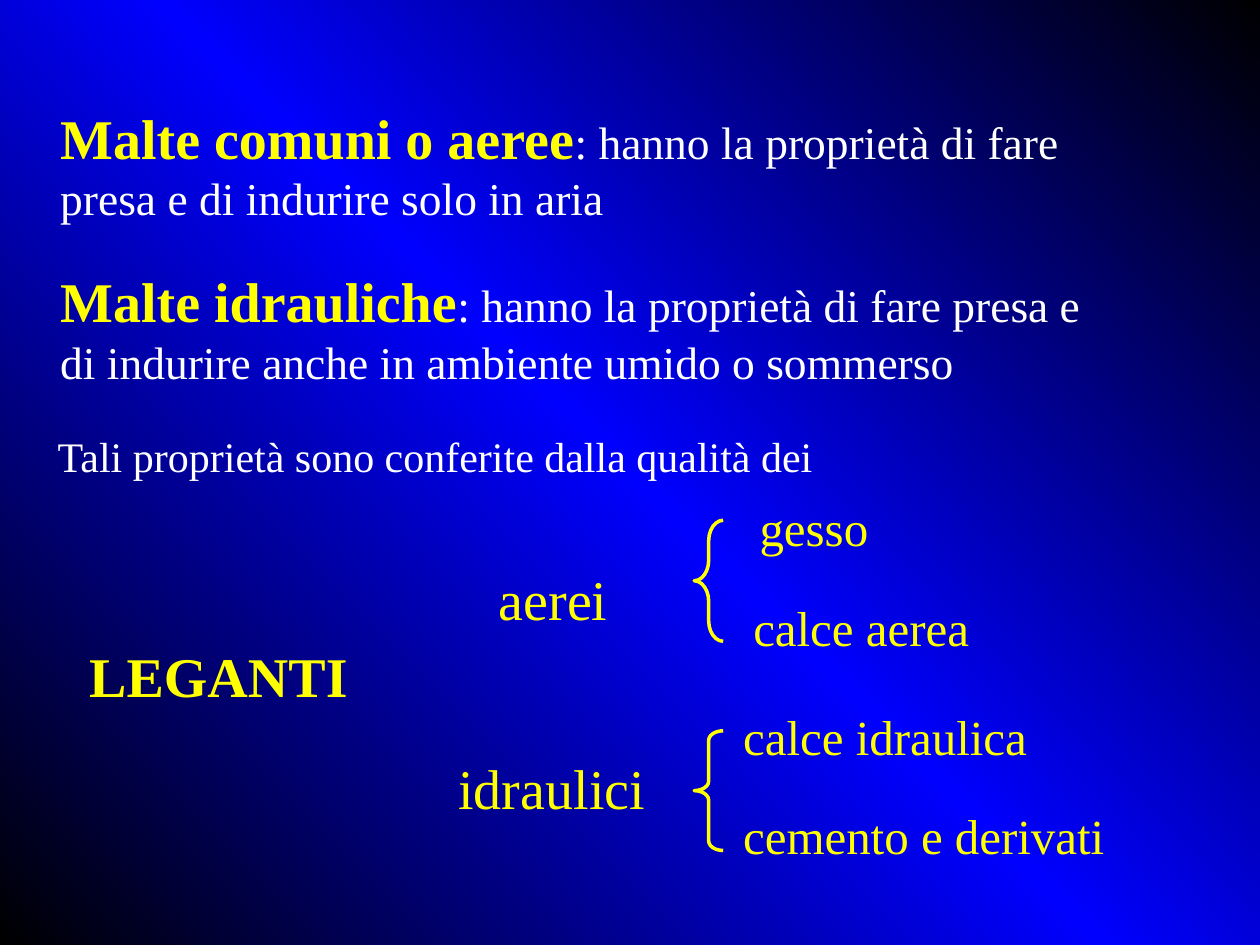
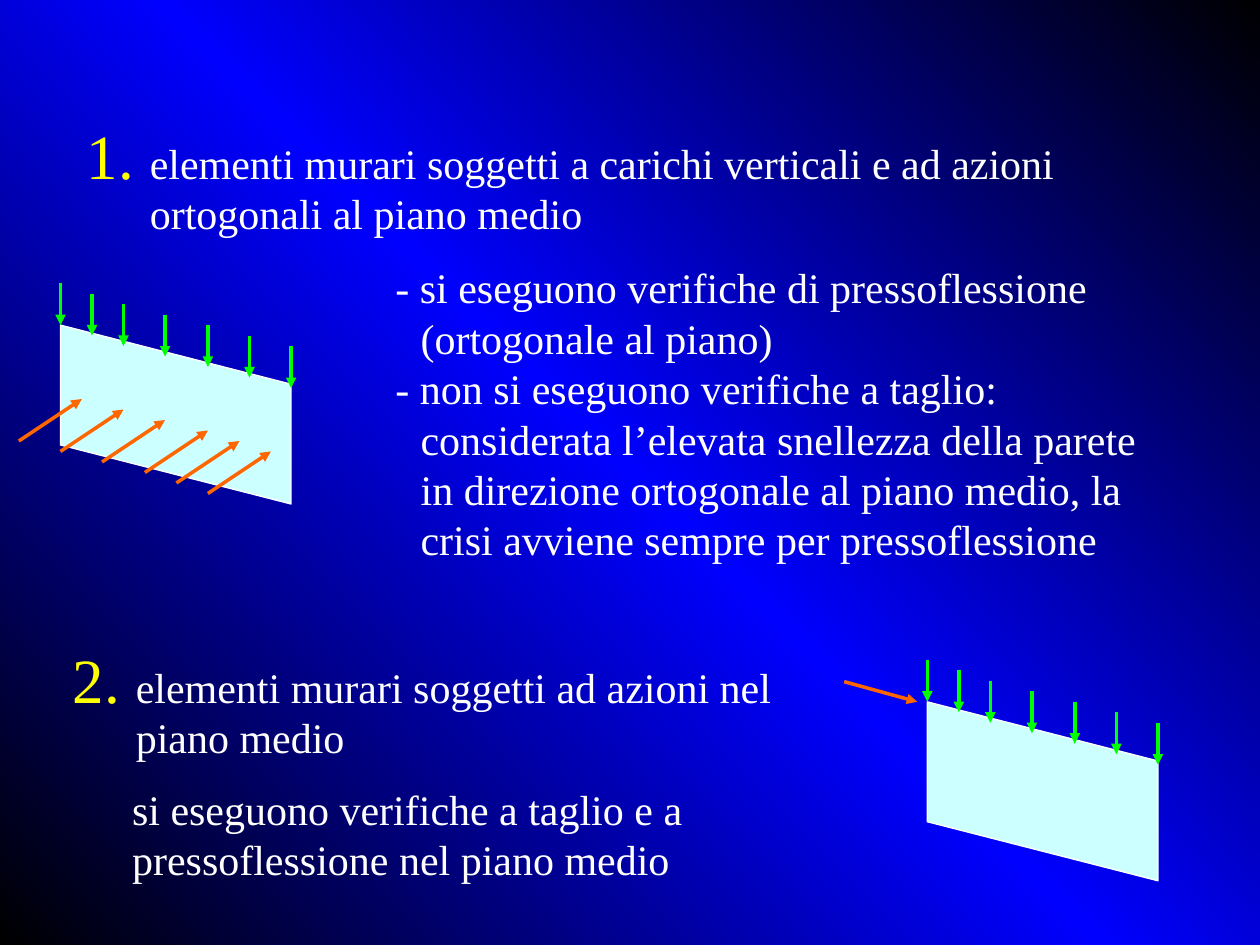
import copy

import lxml.etree
import pptx
import pptx.dml.color
import pptx.enum.shapes
import pptx.enum.text
import pptx.oxml.ns
import pptx.util

Inches = pptx.util.Inches
Pt = pptx.util.Pt
RGBColor = pptx.dml.color.RGBColor
SHAPES = pptx.enum.shapes.MSO_SHAPE
qn = pptx.oxml.ns.qn

FONT = "Times New Roman"
BLACK = RGBColor(0x00, 0x00, 0x00)
BLUE = RGBColor(0x00, 0x00, 0xFF)
WHITE = RGBColor(0xFF, 0xFF, 0xFF)
YELLOW = RGBColor(0xFF, 0xFF, 0x00)
GREEN = RGBColor(0x00, 0xFF, 0x00)
ORANGE = RGBColor(0xFF, 0x66, 0x00)
PALE_CYAN = RGBColor(0xCC, 0xFF, 0xFF)

# Slide 1: mortar definitions (top, term, explanation)
DEFINITIONS = [
    (0.77, "Malte comuni o aeree",
     ": hanno la proprietà di fare presa e di indurire solo in aria"),
    (2.07, "Malte idrauliche",
     ": hanno la proprietà di fare presa e di indurire anche in ambiente umido o sommerso"),
]
# Slide 1: single-line labels (text, left, top, width, height, size, colour, bold)
LABELS = [
    ("Tali proprietà sono conferite dalla qualità dei", 0.36, 3.37, 6.24, 0.5, 24, WHITE, False),
    ("LEGANTI", 0.61, 5.04, 2.25, 0.63, 32, YELLOW, True),
    ("aerei", 3.86, 4.43, 1.07, 0.63, 32, YELLOW, False),
    ("idraulici", 3.54, 5.93, 1.68, 0.63, 32, YELLOW, False),
    ("gesso", 5.93, 3.9, 1.06, 0.57, 28, YELLOW, False),
    ("calce aerea", 5.88, 4.69, 1.91, 0.57, 28, YELLOW, False),
    ("calce idraulica", 5.8, 5.56, 2.45, 0.57, 28, YELLOW, False),
    ("cemento e derivati", 5.8, 6.34, 3.07, 0.57, 28, YELLOW, False),
]
# Slide 1: braces (top, height, curvature)
BRACES = [(4.13, 0.96, 0.71), (5.8, 0.95, 0.33)]

# Slide 2: text boxes (frame, paragraphs); a paragraph is
# (text, left margin, first-line indent, number or None, space after)
WALL_TEXTS = [
    ((0.59, 1.04, 8.35, 0.9), [
        ("elementi murari soggetti a carichi verticali e ad azioni ortogonali al piano medio",
         0.5, -0.5, 1, 0),
    ]),
    ((3.04, 2.03, 6.33, 2.52), [
        ("- si eseguono verifiche di pressoflessione (ortogonale al piano)", 0.2, -0.2, None, 0),
        ("- non si eseguono verifiche a taglio: considerata l’elevata snellezza della parete "
         "in direzione ortogonale al piano medio, la crisi avviene sempre per pressoflessione",
         0.2, -0.2, None, 0),
    ]),
    ((0.48, 5.2, 6.33, 1.89), [
        ("elementi murari soggetti ad azioni nel piano medio", 0.5, -0.5, 2, 12),
        ("si eseguono verifiche a taglio e a pressoflessione nel piano medio", 0.47, 0, None, 0),
    ]),
]
# Slide 2: walls and load arrows, measured from the wall's upper left corner
WALLS = [(0.48, 2.58), (7.36, 5.57)]
VERTICAL_LOADS = [0, 0.25, 0.5, 0.83, 1.17, 1.5, 1.83]
ORTHOGONAL_LOADS = [-0.33, 0, 0.33, 0.67, 0.92, 1.17]
LOAD_STEP = 1 / 12
LOAD_RISE = 1 / 3
WALL_WIDTH, WALL_HEIGHT = 1.83, 1.42


def format_run(run, size, color, bold=False):
    run.font.name = FONT
    run.font.size = Pt(size)
    run.font.bold = bold
    run.font.color.rgb = color


def add_text_box(slide, left, top, width, height, wrap=True):
    box = slide.shapes.add_textbox(Inches(left), Inches(top), Inches(width), Inches(height))
    box.text_frame.word_wrap = wrap
    box.text_frame.auto_size = pptx.enum.text.MSO_AUTO_SIZE.SHAPE_TO_FIT_TEXT
    return box.text_frame


def indent_paragraph(paragraph, margin, indent, number):
    properties = paragraph._p.get_or_add_pPr()
    properties.set("marL", str(Inches(margin)))
    properties.set("indent", str(Inches(indent)))
    if number:
        color = lxml.etree.SubElement(properties, qn("a:buClr"))
        lxml.etree.SubElement(color, qn("a:srgbClr"), val=str(YELLOW))
        lxml.etree.SubElement(properties, qn("a:buSzPct"), val="150000")
        lxml.etree.SubElement(properties, qn("a:buAutoNum"),
                              type="arabicPeriod", startAt=str(number))


def add_arrow(slide, start_x, start_y, end_x, end_y, color):
    arrow = slide.shapes.add_connector(
        pptx.enum.shapes.MSO_CONNECTOR.STRAIGHT,
        Inches(start_x), Inches(start_y), Inches(end_x), Inches(end_y))
    arrow.line.color.rgb = color
    arrow.line.width = Pt(2)
    lxml.etree.SubElement(arrow.line._get_or_add_ln(), qn("a:tailEnd"), type="triangle")
    lxml.etree.SubElement(arrow._element.spPr, qn("a:effectLst"))


def add_wall(slide, left, top):
    # The parallelogram is turned upright about its centre
    turn = (WALL_WIDTH - WALL_HEIGHT) / 2
    wall = slide.shapes.add_shape(
        SHAPES.PARALLELOGRAM, Inches(left + turn), Inches(top - turn),
        Inches(WALL_HEIGHT), Inches(WALL_WIDTH))
    wall.rotation = 270
    wall.adjustments[0] = 0.33
    wall.shadow.inherit = False
    wall.fill.solid()
    wall.fill.fore_color.rgb = PALE_CYAN
    wall.line.color.rgb = WHITE
    wall.line.width = Pt(0.75)
    for index, offset in enumerate(VERTICAL_LOADS):
        tip = top + index * LOAD_STEP
        add_arrow(slide, left + offset, tip - LOAD_RISE, left + offset, tip, GREEN)


def set_background(master):
    fill = master.background.fill
    fill.gradient()
    fill.gradient_angle = 45
    stop_list = master._element.cSld.find(".//" + qn("a:gsLst"))
    stop_list.append(copy.deepcopy(stop_list[0]))
    for stop, position, color in zip(fill.gradient_stops, (0, 0.5, 1), (BLACK, BLUE, BLACK)):
        stop.position = position
        stop.color.rgb = color


def build_mortar_slide(slide):
    for top, term, explanation in DEFINITIONS:
        paragraph = add_text_box(slide, 0.38, top, 8.5, 1.07).paragraphs[0]
        for text, size, color, bold in ((term, 32, YELLOW, True),
                                        (explanation, 26, WHITE, False)):
            run = paragraph.add_run()
            run.text = text
            format_run(run, size, color, bold)

    for text, left, top, width, height, size, color, bold in LABELS:
        frame = add_text_box(slide, left, top, width, height, wrap=False)
        frame.text = text
        format_run(frame.paragraphs[0].runs[0], size, color, bold)

    for top, height, curvature in BRACES:
        brace = slide.shapes.add_shape(SHAPES.LEFT_BRACE, Inches(5.51), Inches(top),
                                       Inches(0.23), Inches(height))
        brace.adjustments[0] = curvature
        brace.shadow.inherit = False
        brace.fill.background()
        brace.line.color.rgb = YELLOW
        brace.line.width = Pt(2)


def build_wall_slide(slide):
    for left, top in WALLS:
        add_wall(slide, left, top)

    # Loads orthogonal to the first wall, load in the plane of the second
    left, top = WALLS[0]
    for index, offset in enumerate(ORTHOGONAL_LOADS):
        x, y = left + offset, top + 0.92 + index * LOAD_STEP
        add_arrow(slide, x, y, x + 0.5, y - LOAD_RISE, ORANGE)
    add_arrow(slide, 6.7, 5.41, 7.28, 5.57, ORANGE)

    for box, paragraphs in WALL_TEXTS:
        frame = add_text_box(slide, *box)
        for index, (text, margin, indent, number, space_after) in enumerate(paragraphs):
            paragraph = frame.add_paragraph() if index else frame.paragraphs[0]
            paragraph.text = text
            indent_paragraph(paragraph, margin, indent, number)
            paragraph.space_after = Pt(space_after)
            format_run(paragraph.runs[0], 24, WHITE)


def main():
    presentation = pptx.Presentation()
    presentation.slide_width = Inches(10)
    presentation.slide_height = Inches(7.5)
    set_background(presentation.slide_master)
    blank_layout = presentation.slide_layouts[6]
    for build in (build_mortar_slide, build_wall_slide):
        build(presentation.slides.add_slide(blank_layout))
    presentation.save("out.pptx")


if __name__ == "__main__":
    main()
